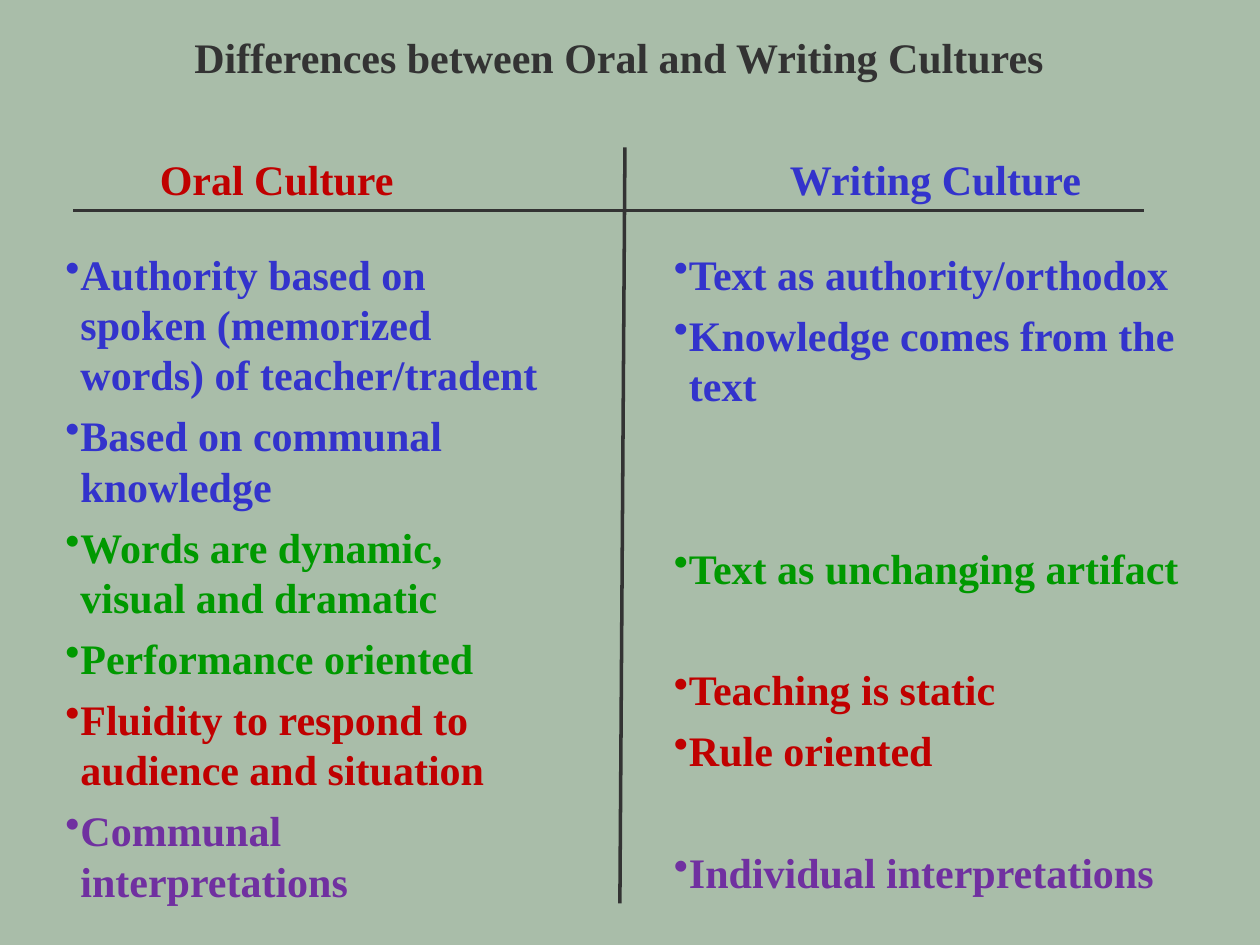
from lxml.etree import SubElement
from pptx import Presentation
from pptx.dml.color import RGBColor
from pptx.enum.shapes import MSO_CONNECTOR as Connector
from pptx.enum.text import MSO_AUTO_SIZE as AutoSize, PP_ALIGN as Align
from pptx.oxml.ns import qn
from pptx.util import Inches, Pt

INK, RED, BLUE, GREEN, PURPLE = "333333", "C00000", "3333CC", "009900", "7030A0"
ROW_PITCH = 34.8


def color(value):
    return RGBColor.from_string(value)


class CultureSlide:
    """Holds the text style and the current slide, and adds its elements."""

    font, size = "Times New Roman", 24

    def __init__(self, slide, background):
        self.slide = slide
        fill = slide.background.fill
        fill.solid()
        fill.fore_color.rgb = color(background)

    def frame(self, left, top, width, height):
        box = self.slide.shapes.add_textbox(*map(Inches, (left, top, width, height)))
        box.text_frame.word_wrap = True
        box.text_frame.auto_size = AutoSize.SHAPE_TO_FIT_TEXT
        return box.text_frame

    def run(self, paragraph, text, ink):
        run = paragraph.add_run()
        run.text = text
        run.font.name, run.font.size, run.font.bold = self.font, Pt(self.size), True
        run.font.color.rgb = color(ink)

    def title(self, text, *area):
        heading = self.frame(*area).paragraphs[0]
        heading.alignment = Align.CENTER
        self.run(heading, text, INK)

    def headings(self, columns, *area):
        row = self.frame(*area).paragraphs[0]
        stops = SubElement(row._p.get_or_add_pPr(), qn("a:tabLst"))
        for text, ink, stop in columns:
            SubElement(stops, qn("a:tab"), pos=str(Inches(stop)), algn="l")
            self.run(row, "\t" + text, ink)

    def bullets(self, points, *area):
        column = self.frame(*area)
        for index, (text, ink, skipped_rows) in enumerate(points):
            point = column.add_paragraph() if index else column.paragraphs[0]
            properties = point._p.get_or_add_pPr()
            properties.set("marL", str(Inches(0.12)))
            properties.set("indent", str(-Inches(0.12)))
            SubElement(properties, qn("a:buChar"), char="•")
            point.space_after = Pt(6)
            if skipped_rows:
                point.space_before = Pt(skipped_rows * ROW_PITCH)
            self.run(point, text, ink)

    def rule(self, *ends):
        rule = self.slide.shapes.add_connector(Connector.STRAIGHT, *map(Inches, ends))
        rule.line.color.rgb = color(INK)
        rule.line.width = Pt(2)
        SubElement(rule._element.spPr, qn("a:effectLst"))


def main():
    deck = Presentation()
    deck.slide_width, deck.slide_height = Inches(10), Inches(7.5)
    cultures = CultureSlide(deck.slides.add_slide(deck.slide_layouts[6]), "A9BDA9")

    cultures.title("Differences between Oral and Writing Cultures", 0.33, 0.2, 9.17, 0.51)
    cultures.headings(
        [("Oral Culture", RED, 1), ("Writing Culture", BLUE, 6)], 0.17, 1.17, 9.58, 0.51
    )
    cultures.rule(4.96, 1.17, 4.92, 7.17)
    cultures.rule(0.58, 1.67, 9.08, 1.67)

    oral = [
        ("Authority based on spoken (memorized words) of teacher/tradent", BLUE, 0),
        ("Based on communal knowledge", BLUE, 0),
        ("Words are dynamic, visual and dramatic", GREEN, 0),
        ("Performance oriented", GREEN, 0),
        ("Fluidity to respond to audience and situation", RED, 0),
        ("Communal interpretations", PURPLE, 0),
    ]
    writing = [
        ("Text as authority/orthodox", BLUE, 0),
        ("Knowledge comes from the text", BLUE, 0),
        ("Text as unchanging artifact", GREEN, 2),
        ("Teaching is static", RED, 1),
        ("Rule oriented", RED, 0),
        ("Individual interpretations", PURPLE, 1),
    ]
    cultures.bullets(oral, 0.42, 1.92, 4.08, 5.37)
    cultures.bullets(writing, 5.25, 1.92, 4.33, 5.3)

    deck.save("out.pptx")


if __name__ == "__main__":
    main()
